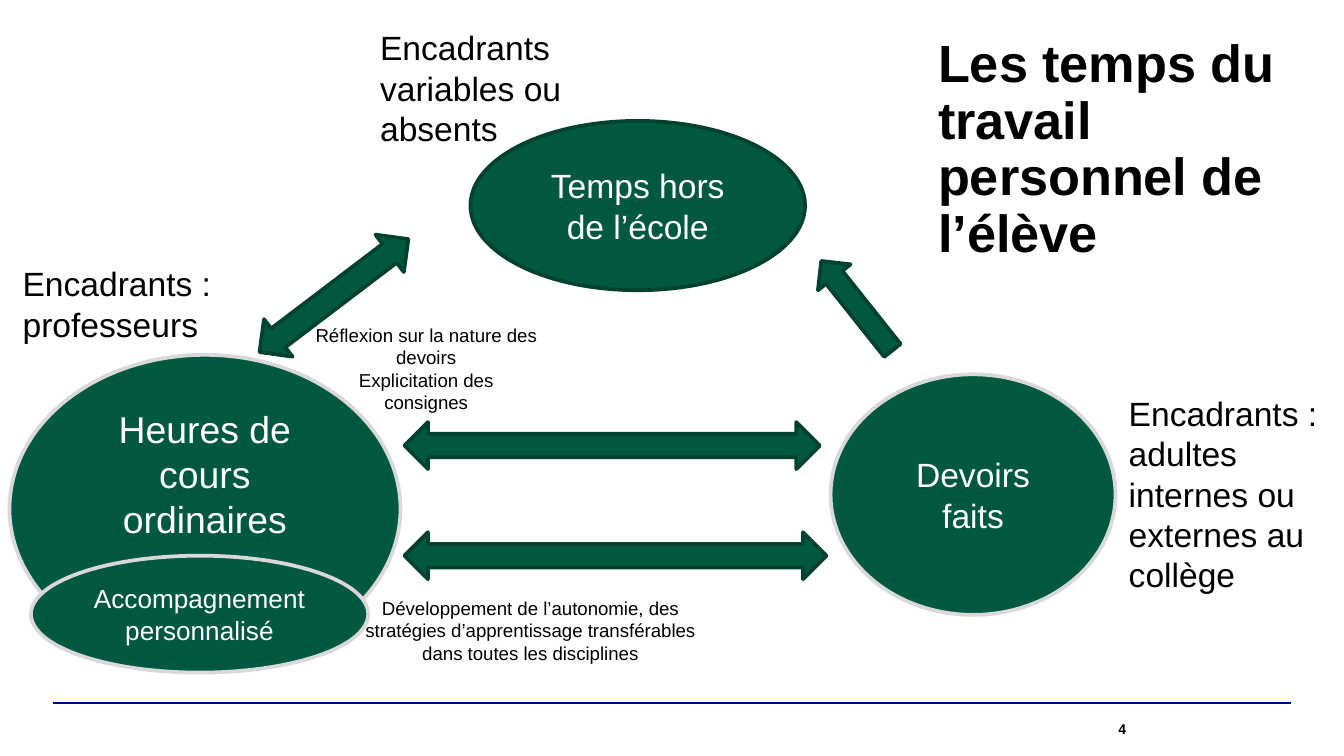
"""Build the slide on the times of a pupil's personal work."""
from dataclasses import dataclass

from lxml.etree import SubElement
from pptx import Presentation
from pptx.dml.color import RGBColor
from pptx.enum.shapes import MSO_CONNECTOR, MSO_SHAPE
from pptx.enum.text import MSO_ANCHOR, PP_ALIGN
from pptx.oxml.ns import qn
from pptx.util import Inches, Pt


@dataclass(frozen=True)
class Theme:
    font: str = "Arial"
    ink: str = "000000"
    light: str = "FFFFFF"
    green: str = "005841"
    dark_green: str = "004130"
    grey: str = "D9D9D9"
    navy: str = "000091"
    title: float = 28
    large: float = 20
    body: float = 18
    medium: float = 14
    small: float = 10
    number: float = 7.5
    outline: float = 2
    rule: float = 0.8


THEME = Theme()
COLUMNS, ROWS = 100, 56.25
CELL = Inches(10) / COLUMNS

TITLE = ("Les temps du travail personnel de l’élève", (69.8, 2.8, 27.9, 15.4))
PAGE_NUMBER = ("4", (69, 52.3, 14.8, 3.9))
FOOTER_RULE = (3.94, 96.06, 52.32)

TIMES = [
    ("Heures de cours ordinaires", (0.7, 26.4, 29.1, 22.9), THEME.large, THEME.grey, MSO_ANCHOR.TOP),
    ("Accompagnement personnalisé", (2.3, 41.35, 25.1, 8.7), THEME.medium, THEME.grey, MSO_ANCHOR.MIDDLE),
    ("Devoirs faits", (61.8, 27.85, 21.2, 17.9), THEME.body, THEME.grey, MSO_ANCHOR.MIDDLE),
    ("Temps hors de l’école", (35, 9, 24.9, 12.6), THEME.body, THEME.dark_green, MSO_ANCHOR.MIDDLE),
]

LINKS = [
    (MSO_SHAPE.LEFT_RIGHT_ARROW, (30.1, 39.6, 31.4, 3.5), 0),
    (MSO_SHAPE.LEFT_RIGHT_ARROW, (30.1, 31.4, 30.9, 3.5), 0),
    (MSO_SHAPE.DOWN_ARROW, (62.2, 18.5, 3.1, 8.5), 141.5),
    (MSO_SHAPE.LEFT_RIGHT_ARROW, (17.9, 20.25, 13.9, 3.5), 322.8),
]

EXCHANGES = [
    (["Développement de l’autonomie, des stratégies d’apprentissage transférables "
      "dans toutes les disciplines"], (24.9, 43.9, 29.1, 6.1)),
    (["Réflexion sur la nature des devoirs", "Explicitation des consignes"], (22.45, 23.6, 18.52, 7.7)),
]

SUPERVISORS = [
    ("Encadrants : professeurs", (0.7, 19.1, 17.6, 7.1)),
    ("Encadrants variables ou absents", (27.3, 1.54, 22.7, 10.1)),
    ("Encadrants : adultes internes ou externes au collège", (83, 28.74, 16.8, 16.2)),
]


def place(cells):
    return [round(value * CELL) for value in cells]


def write(frame, paragraphs, size, color=THEME.ink, align=PP_ALIGN.LEFT,
          anchor=MSO_ANCHOR.TOP, bold=False, spacing=None):
    frame.word_wrap = True
    frame.vertical_anchor = anchor
    for index, wording in enumerate(paragraphs):
        paragraph = frame.add_paragraph() if index else frame.paragraphs[0]
        paragraph.alignment = align
        if spacing:
            paragraph.line_spacing = spacing
        run = paragraph.add_run()
        run.text = wording
        run.font.name = THEME.font
        run.font.size = Pt(size)
        run.font.bold = bold
        run.font.color.rgb = RGBColor.from_string(color)


def add_text(slide, paragraphs, cells, size, flush=False, **style):
    frame = slide.shapes.add_textbox(*place(cells)).text_frame
    if flush:
        frame.margin_left = frame.margin_right = frame.margin_top = frame.margin_bottom = 0
    write(frame, paragraphs, size, **style)


def add_green(slide, preset, cells, outline):
    shape = slide.shapes.add_shape(preset, *place(cells))
    shape.shadow.inherit = False
    shape.fill.solid()
    shape.fill.fore_color.rgb = RGBColor.from_string(THEME.green)
    shape.line.color.rgb = RGBColor.from_string(outline)
    shape.line.width = Pt(THEME.outline)
    return shape


def add_time(slide, wording, cells, size, outline, anchor):
    ellipse = add_green(slide, MSO_SHAPE.OVAL, cells, outline)
    write(ellipse.text_frame, [wording], size, THEME.light, PP_ALIGN.CENTER, anchor)


def add_rule(slide, left, right, row):
    rule = slide.shapes.add_connector(MSO_CONNECTOR.STRAIGHT, *place((left, row, right, row)))
    rule.line.color.rgb = RGBColor.from_string(THEME.navy)
    rule.line.width = Pt(THEME.rule)
    SubElement(rule._element.spPr, qn("a:effectLst"))


def main():
    deck = Presentation()
    deck.slide_width, deck.slide_height = place((COLUMNS, ROWS))
    slide = deck.slides.add_slide(deck.slide_layouts[6])

    add_rule(slide, *FOOTER_RULE)
    number, cells = PAGE_NUMBER
    add_text(slide, [number], cells, THEME.number, flush=True, bold=True,
             align=PP_ALIGN.RIGHT, anchor=MSO_ANCHOR.MIDDLE)

    *school_times, outside_time = TIMES
    for time in school_times:
        add_time(slide, *time)
    for paragraphs, cells in EXCHANGES:
        add_text(slide, paragraphs, cells, THEME.small, align=PP_ALIGN.CENTER)
    add_time(slide, *outside_time)
    for preset, cells, angle in LINKS:
        add_green(slide, preset, cells, THEME.dark_green).rotation = angle

    title, cells = TITLE
    add_text(slide, [title], cells, THEME.title, flush=True, bold=True, spacing=0.9)
    for wording, cells in SUPERVISORS:
        add_text(slide, [wording], cells, THEME.body)

    deck.save("out.pptx")


if __name__ == "__main__":
    main()
